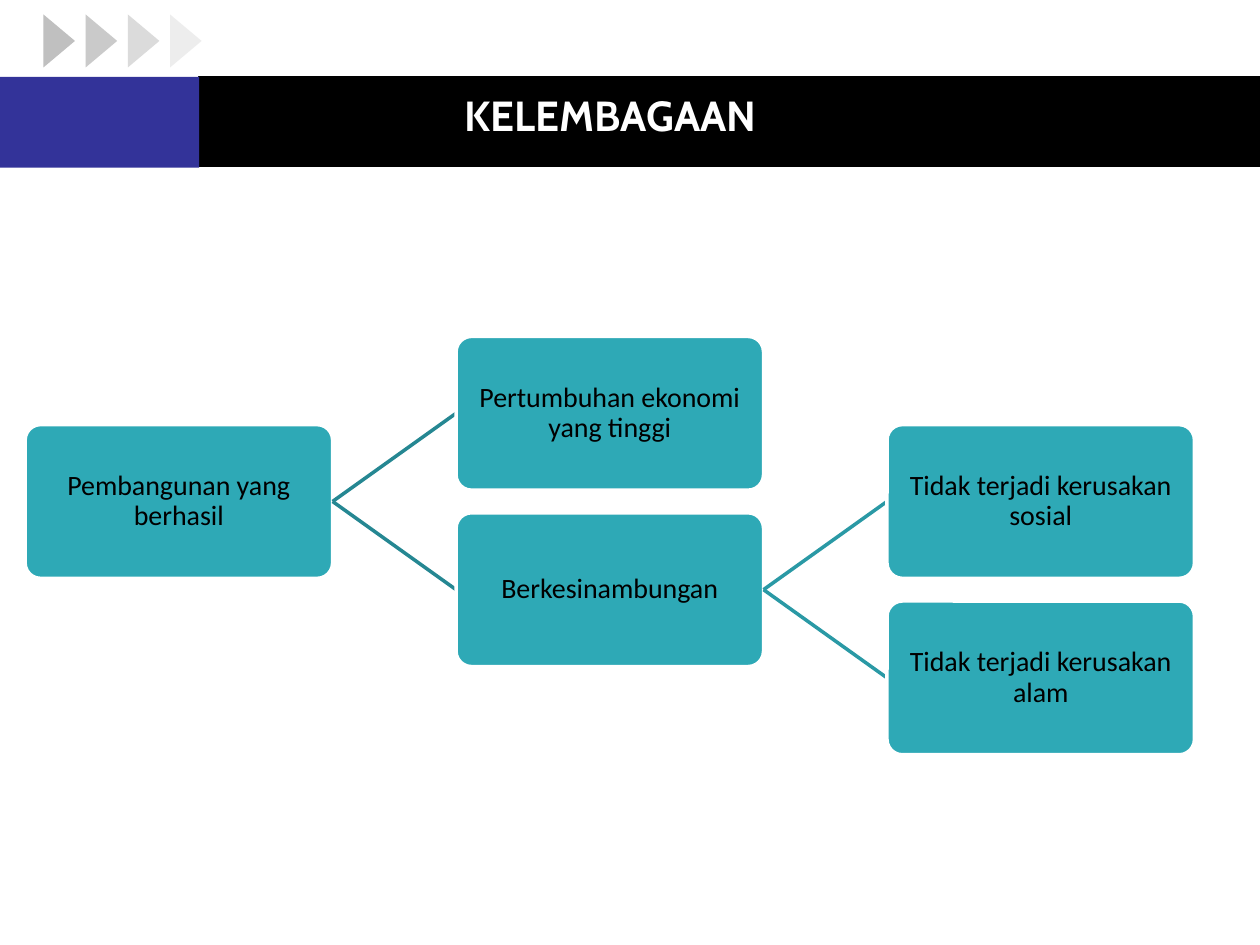
from dataclasses import dataclass

from lxml.etree import SubElement
from pptx import Presentation
from pptx.dml.color import RGBColor
from pptx.enum.shapes import MSO_CONNECTOR as CONN, MSO_SHAPE as SHAPE
from pptx.enum.text import MSO_ANCHOR as ANCHOR, PP_ALIGN as ALIGN
from pptx.oxml.ns import qn
from pptx.util import Inches, Pt


@dataclass(frozen=True)
class Theme:
    black: str = "000000"
    white: str = "FFFFFF"
    accent: str = "333399"
    arrow: str = "C0C0C0"
    node: str = "2EA9B6"
    links: tuple = ("258792", "2A99A5")
    title_font: str = "Cabin"
    body_font: str = "Calibri"
    title_size: int = 24
    body_size: int = 16
    line_width: float = 2


THEME = Theme()
TREE = ("Pembangunan yang berhasil", [
    ("Pertumbuhan ekonomi yang tinggi", []),
    ("Berkesinambungan", [
        ("Tidak terjadi kerusakan sosial", []),
        ("Tidak terjadi kerusakan alam", []),
    ]),
])
NODE_W, NODE_H = 2.44, 1.22
COL_STEP, ROW_STEP = 3.42, 1.4


def rgb(color):
    return RGBColor.from_string(color)


def add_shape(slide, kind, box, fill, line=None, width=0):
    sp = slide.shapes.add_shape(kind, *map(Inches, box))
    sp.shadow.inherit = False
    sp.fill.solid()
    sp.fill.fore_color.rgb = rgb(fill)
    if line:
        sp.line.color.rgb = rgb(line)
        sp.line.width = Pt(width)
    else:
        sp.line.fill.background()
    return sp


def set_text(sp, text, color, margin, spacing=None, **font):
    tf = sp.text_frame
    frame = {"word_wrap": True, "vertical_anchor": ANCHOR.MIDDLE}
    for side in ("left", "top", "right", "bottom"):
        frame[f"margin_{side}"] = Inches(margin)
    for name, value in frame.items():
        setattr(tf, name, value)
    p = tf.paragraphs[0]
    p.alignment = ALIGN.CENTER
    p.line_spacing = spacing
    r = p.add_run()
    r.text = text
    r.font.color.rgb = rgb(color)
    for name, value in font.items():
        setattr(r.font, name, value)


def add_arrows(slide, left, top):
    width, height, step = 0.42, 0.25, 0.335
    for i, alpha in enumerate((100, 84, 56, 27)):
        sp = add_shape(slide, SHAPE.ISOSCELES_TRIANGLE,
                       (left + i * step, top, width, height), THEME.arrow)
        sp.rotation = 90
        color = sp.fill._xPr.find(".//" + qn("a:srgbClr"))
        SubElement(color, qn("a:alpha"), val=str(alpha * 1000))


def add_header(slide, left, top, width, height):
    accent_w = 1.58
    add_shape(slide, SHAPE.RECTANGLE,
              (left + accent_w, top, width - accent_w, height),
              THEME.black, THEME.black, 0.75)
    add_shape(slide, SHAPE.RECTANGLE,
              (left, top, accent_w, height + 0.01), THEME.accent)
    add_arrows(slide, left + 0.26, top - 0.41)
    title = slide.shapes.add_textbox(
        *map(Inches, (left + 0.08, top + 0.15, 9.53, 0.3)))
    set_text(title, "KELEMBAGAAN", THEME.white, 0.05, bold=True,
             name=THEME.title_font, size=Pt(THEME.title_size))


def add_link(slide, start, end, color):
    link = slide.shapes.add_connector(
        CONN.STRAIGHT, *map(Inches, (*start, *end)))
    link.line.color.rgb = rgb(color)
    link.line.width = Pt(THEME.line_width)
    SubElement(link._element.spPr, qn("a:effectLst"))


def add_tree(slide, node, left, top, level=0):
    text, children = node
    sp = add_shape(slide, SHAPE.ROUNDED_RECTANGLE,
                   (left, top, NODE_W, NODE_H),
                   THEME.node, THEME.white, THEME.line_width)
    sp.adjustments[0] = 0.1
    set_text(sp, text, THEME.black, 0.05, 0.9,
             name=THEME.body_font, size=Pt(THEME.body_size))
    middle = NODE_H / 2
    for i, child in enumerate(children):
        child_left = left + COL_STEP
        child_top = top + (i - (len(children) - 1) / 2) * ROW_STEP
        add_link(slide, (left + NODE_W, top + middle),
                 (child_left, child_top + middle), THEME.links[level])
        add_tree(slide, child, child_left, child_top, level + 1)


def main():
    prs = Presentation()
    prs.slide_width, prs.slide_height = Inches(10), Inches(7.5)
    slide = prs.slides.add_slide(prs.slide_layouts[6])
    add_header(slide, 0, 0.61, 10, 0.71)
    add_tree(slide, TREE, 0.2, 3.37)
    prs.save("out.pptx")


if __name__ == "__main__":
    main()
